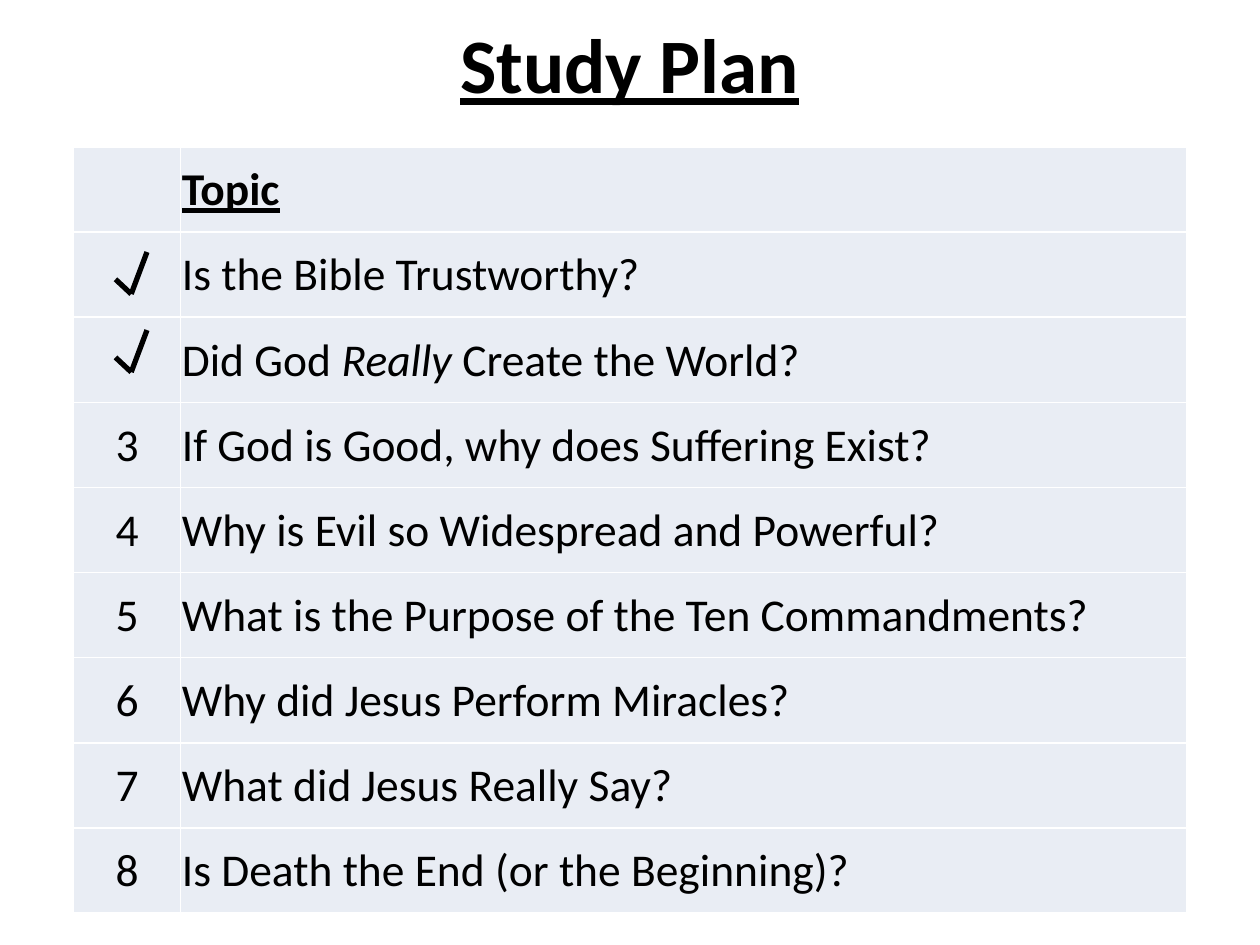
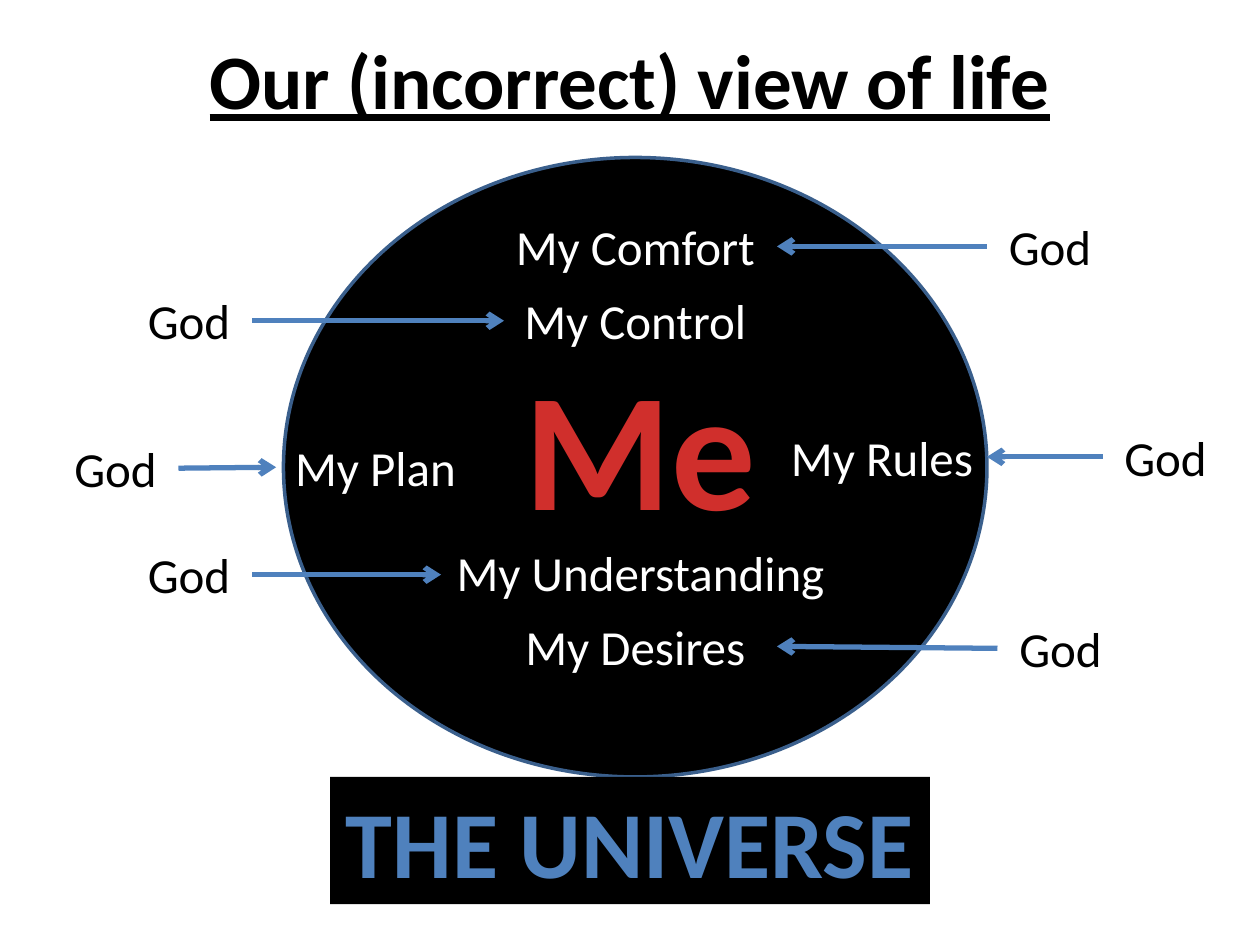
from lxml.etree import SubElement
from pptx import Presentation
from pptx.dml.color import RGBColor
from pptx.enum.shapes import MSO_CONNECTOR, MSO_SHAPE
from pptx.enum.text import MSO_ANCHOR, PP_ALIGN
from pptx.oxml.ns import qn
from pptx.util import Inches, Pt

# The slide is a grid of 120 columns and 90 rows; every length counts those.
COLUMNS, ROWS = 120, 90
WIDTH, HEIGHT = Inches(10), Inches(7.5)
FONT = "Calibri"

BLACK = RGBColor(0x00, 0x00, 0x00)
WHITE = RGBColor(0xFF, 0xFF, 0xFF)
BLUE = RGBColor(0x4F, 0x81, 0xBD)
RIM_BLUE = RGBColor(0x3A, 0x5F, 0x8C)
RED = RGBColor(0xD0, 0x2F, 0x2C)
CELL_GREY = RGBColor(0xE9, 0xED, 0xF4)

TITLE = {"size": Pt(44), "bold": True, "underline": True}
HEADING = {"size": Pt(26), "bold": True, "underline": True}
TOPIC = {"size": Pt(26)}
EMPHASIS = {"size": Pt(26), "italic": True}
LABEL = {"size": Pt(28)}
CENTRE_WORD = {"size": Pt(96), "bold": True}
BANNER = {"size": Pt(54), "bold": True}

# Each row: number (blank when ticked off), then the spans of its topic
TOPICS = [
    ("", [("Topic", HEADING)]),
    ("", [("Is the Bible Trustworthy?", TOPIC)]),
    ("", [("Did God ", TOPIC), ("Really", EMPHASIS), (" Create the World?", TOPIC)]),
    ("3", [("If God is Good, why does Suffering Exist?", TOPIC)]),
    ("4", [("Why is Evil so Widespread and Powerful?", TOPIC)]),
    ("5", [("What is the Purpose of the Ten Commandments?", TOPIC)]),
    ("6", [("Why did Jesus Perform Miracles?", TOPIC)]),
    ("7", [("What did Jesus Really Say?", TOPIC)]),
    ("8", [("Is Death the End (or the Beginning)?", TOPIC)]),
]
TABLE_AREA = (7, 14, 106, 73)
NUMBER_COLUMN = 10.2
TICK = [(11, 26.6), (12.5, 28), (14, 24)]
TICK_DROPS = (7.44, 0)

# Text, its (left, top, width), left and top of its "God", arrow tip
BELIEFS = [
    ("My Control", (45, 27.12, 31), (12, 27.12), (48, 30.55)),
    ("My Understanding", (40, 51.12, 42), (12, 51.3), (42, 54.73)),
    ("My Comfort", (45, 20.04, 31), (94, 20.04), (74, 23.47)),
    ("My Desires", (45, 58.08, 31), (95, 58.32), (74, 61.56)),
    ("My Plan", (24, 41.04, 23.5), (5, 41.16), (26.3, 44.5)),
    ("My Rules", (74, 40.08, 20), (105, 40.08), None),
]
LABEL_HEIGHT, GOD_WIDTH = 6.86, 12
LEFT_SIDE, RIGHT_SIDE = 1, 3


def across(columns):
    return round(WIDTH * columns / COLUMNS)


def down(rows):
    return round(HEIGHT * rows / ROWS)


def place(left, top, width, height):
    return across(left), down(top), across(width), down(height)


def write(frame, spans, color=BLACK, align=PP_ALIGN.CENTER):
    para = frame.paragraphs[0]
    para.alignment = align
    for text, style in spans:
        span = para.add_run()
        span.text = text
        span.font.name = FONT
        span.font.color.rgb = color
        for name, value in style.items():
            setattr(span.font, name, value)


def add_text(page, area, text, style, color=BLACK, anchor=MSO_ANCHOR.TOP):
    box = page.shapes.add_textbox(*place(*area))
    box.text_frame.word_wrap = True
    box.text_frame.vertical_anchor = anchor
    write(box.text_frame, [(text, style)], color)
    return box


def add_title(page, area, text):
    add_text(page, area, text, TITLE, anchor=MSO_ANCHOR.MIDDLE)


def add_solid(page, preset, area):
    shape = page.shapes.add_shape(preset, *place(*area))
    shape.shadow.inherit = False
    shape.fill.solid()
    shape.fill.fore_color.rgb = BLACK
    return shape


def add_line(page, start, end, color):
    line = page.shapes.add_connector(
        MSO_CONNECTOR.STRAIGHT,
        across(start[0]), down(start[1]), across(end[0]), down(end[1]))
    line.line.color.rgb = color
    line.line.width = Pt(3)
    SubElement(line._element.spPr, qn("a:effectLst"))
    return line


def style_cell(cell):
    """Give a cell white borders, a pale fill and narrow margins."""
    properties = cell._tc.get_or_add_tcPr()
    for side in ("lnL", "lnR", "lnT", "lnB"):
        border = SubElement(properties, qn(f"a:{side}"), w=str(Pt(1)))
        fill = SubElement(border, qn("a:solidFill"))
        SubElement(fill, qn("a:srgbClr"), val=str(WHITE))
    cell.fill.solid()
    cell.fill.fore_color.rgb = CELL_GREY
    cell.vertical_anchor = MSO_ANCHOR.MIDDLE
    for side in ("left", "top", "right"):
        setattr(cell, f"margin_{side}", Inches(0.01))
    cell.margin_bottom = 0


def build_study_plan(page):
    add_title(page, (33, 0, 54, 12), "Study Plan")
    width, height = TABLE_AREA[2:]
    table = page.shapes.add_table(len(TOPICS), 2, *place(*TABLE_AREA)).table
    table.columns[0].width = across(NUMBER_COLUMN)
    table.columns[1].width = across(width - NUMBER_COLUMN)
    for index, (number, topic) in enumerate(TOPICS):
        table.rows[index].height = down(height / len(TOPICS))
        number_cell, topic_cell = table.cell(index, 0), table.cell(index, 1)
        for cell in (number_cell, topic_cell):
            style_cell(cell)
        if number:
            write(number_cell.text_frame, [(number, TOPIC)])
        write(topic_cell.text_frame, topic, align=PP_ALIGN.LEFT)
    for drop in TICK_DROPS:
        points = [(x, y + drop) for x, y in TICK]
        for start, end in zip(points, points[1:]):
            add_line(page, start, end, BLACK)


def add_belief(page, text, area, god_corner, tip):
    """Add a belief and the God label whose arrow points at it."""
    belief = add_text(page, (*area, LABEL_HEIGHT), text, LABEL, WHITE)
    god = add_text(page, (*god_corner, GOD_WIDTH, LABEL_HEIGHT), "God", LABEL)
    from_left = god.left < belief.left
    arrow = add_line(page, god_corner, tip or god_corner, BLUE)
    arrow.begin_connect(god, RIGHT_SIDE if from_left else LEFT_SIDE)
    if tip is None:
        arrow.end_connect(belief, LEFT_SIDE if from_left else RIGHT_SIDE)
    SubElement(arrow.line._get_or_add_ln(), qn("a:tailEnd"), type="arrow")


def build_view_of_life(page):
    add_title(page, (6, 0, 108, 15), "Our (incorrect) view of life")
    universe = add_solid(page, MSO_SHAPE.OVAL, (27, 15, 67, 59))
    universe.line.color.rgb = RIM_BLUE
    universe.line.width = Pt(2)
    banner = add_solid(page, MSO_SHAPE.RECTANGLE, (31.44, 74, 57.12, 12.12))
    banner.line.fill.background()
    banner.text_frame.word_wrap = False
    write(banner.text_frame, [("THE UNIVERSE", BANNER)], BLUE)
    add_text(page, (48, 32, 26, 20.64), "Me", CENTRE_WORD, RED)
    for belief in BELIEFS:
        add_belief(page, *belief)


def main():
    deck = Presentation()
    deck.slide_width, deck.slide_height = WIDTH, HEIGHT
    blank = deck.slide_layouts[6]
    for build in (build_study_plan, build_view_of_life):
        build(deck.slides.add_slide(blank))
    deck.save("out.pptx")


if __name__ == "__main__":
    main()
